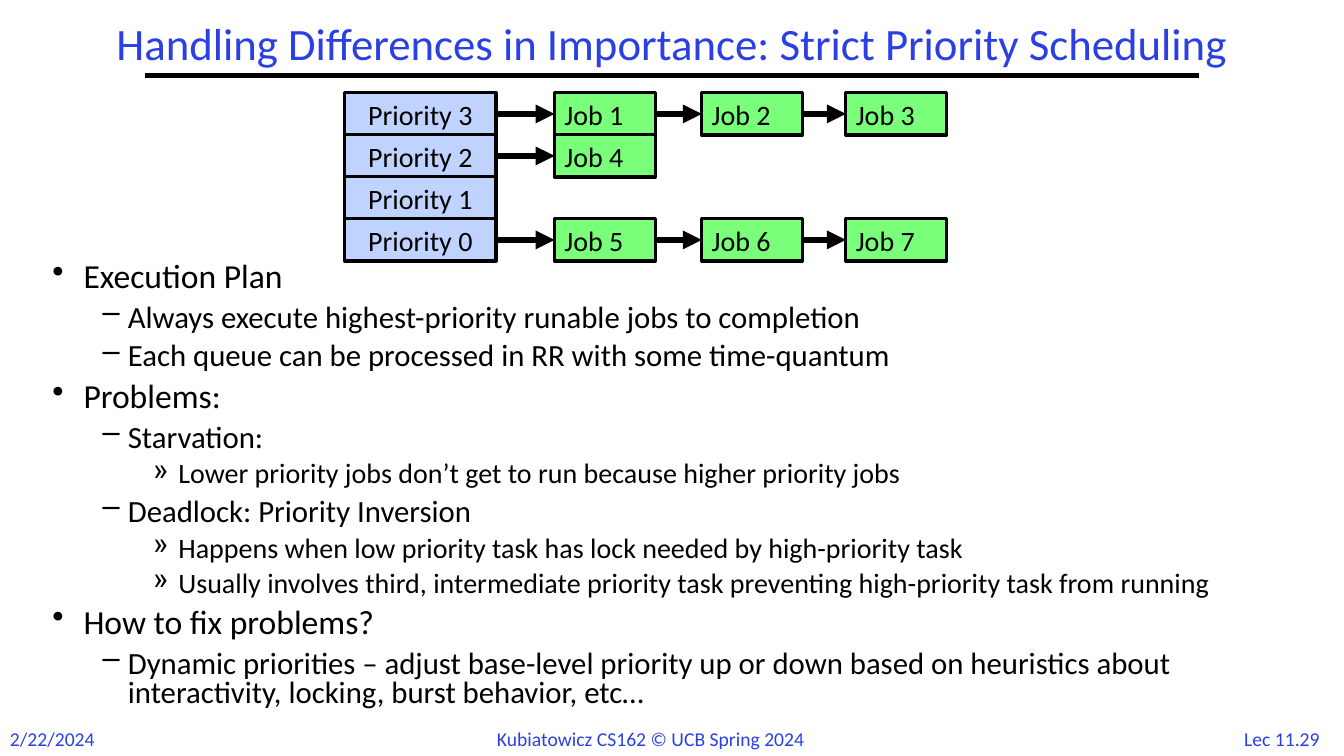
import dataclasses

import lxml.etree
import pptx
import pptx.dml.color
import pptx.enum.shapes
import pptx.enum.text
import pptx.oxml.ns
import pptx.util

Inches = pptx.util.Inches
Pt = pptx.util.Pt
Align = pptx.enum.text.PP_ALIGN
Anchor = pptx.enum.text.MSO_ANCHOR


@dataclasses.dataclass(frozen=True)
class Theme:
    """Hold the colours, font and type sizes of the slide."""

    font: str = "Calibri"
    accent: str = "2A40E2"
    ink: str = "000000"
    queue_fill: str = "C0D2FE"
    job_fill: str = "79FF79"
    title_size: int = 32
    level_sizes: tuple = (24, 22, 20)
    box_size: int = 20
    footer_size: int = 14
    rule_width: float = 3
    box_line: float = 2.25
    arrow_width: float = 4.5


BULLETS = (("•", 0.31, 0.31), ("–", 0.75, 0.25), ("»", 1.25, 0.25))

OUTLINE = (
    (0, "Execution Plan"),
    (1, "Always execute highest-priority runable jobs to completion"),
    (1, "Each queue can be processed in RR with some time-quantum"),
    (0, "Problems:"),
    (1, "Starvation:"),
    (2, "Lower priority jobs don’t get to run because higher priority jobs"),
    (1, "Deadlock: Priority Inversion"),
    (2, "Happens when low priority task has lock needed by high-priority task"),
    (2, "Usually involves third, intermediate priority task preventing "
        "high-priority task from running"),
    (0, "How to fix problems?"),
    (1, "Dynamic priorities – adjust base-level priority up or down based on "
        "heuristics about interactivity, locking, burst behavior, etc…"),
)

QUEUES = (
    ("Priority 3", ("Job 1", "Job 2", "Job 3")),
    ("Priority 2", ("Job 4",)),
    ("Priority 1", ()),
    ("Priority 0", ("Job 5", "Job 6", "Job 7")),
)
QUEUE_LEFT, QUEUE_TOP, QUEUE_WIDTH = 3.42, 0.92, 1.5
JOB_LEFTS, JOB_WIDTH = (5.5, 6.96, 8.39), 1
ROW_HEIGHT, ROW_PITCH = 0.42, 1.25 / 3

FOOTERS = (
    ("2/22/2024", 0, 1.07, Align.LEFT),
    ("Kubiatowicz CS162 © UCB Spring 2024", 4.83, 3.68, Align.LEFT),
    ("Lec 11.29", 12.18, 1.07, Align.CENTER),
)


def apply_format(target, values):
    """Set each named attribute on the target."""
    for name, value in values.items():
        setattr(target, name, value)


def add_child(parent, tag, **attributes):
    """Append a drawing element to the parent."""
    return lxml.etree.SubElement(parent, pptx.oxml.ns.qn(tag), **attributes)


class SlideBuilder:
    """Draw styled elements on the current slide."""

    def __init__(self, slide, theme):
        """Keep the slide and its theme."""
        self.slide = slide
        self.theme = theme

    def add_text(self, paragraph, text, size, colour, **values):
        """Fill a paragraph with one styled run."""
        apply_format(paragraph, values)
        run = paragraph.add_run()
        run.text = text
        apply_format(run.font, {"name": self.theme.font, "size": Pt(size)})
        run.font.color.rgb = pptx.dml.color.RGBColor.from_string(colour)

    def text_box(self, left, top, width, height, **values):
        """Add an empty text box and return its frame."""
        shape = self.slide.shapes.add_textbox(
            Inches(left), Inches(top), Inches(width), Inches(height))
        apply_format(shape.text_frame, {"word_wrap": True, **values})
        return shape.text_frame

    def title(self, text):
        """Add the title and the rule below it."""
        frame = self.text_box(0.17, 0.17, 13, 0.58, vertical_anchor=Anchor.MIDDLE)
        self.add_text(frame.paragraphs[0], text, self.theme.title_size,
                      self.theme.accent, alignment=Align.CENTER, line_spacing=0.9)
        self.line(self.theme.rule_width, (1.44, 0.75), (11.89, 0.75))

    def footer(self, text, left, width, alignment):
        """Add one footer label."""
        frame = self.text_box(left, 7.16, width, 0.34, word_wrap=False)
        self.add_text(frame.paragraphs[0], text, self.theme.footer_size,
                      self.theme.accent, alignment=alignment)

    def outline(self, items):
        """Add the bulleted outline."""
        frame = self.text_box(0.42, 2.56, 12.75, 4.89)
        for index, (level, text) in enumerate(items):
            paragraph = frame.add_paragraph() if index else frame.paragraphs[0]
            size = self.theme.level_sizes[level]
            self.add_text(paragraph, text, size, self.theme.ink, level=level,
                          line_spacing=0.8,
                          space_before=Pt(0.3 * size if index else 0))
            bullet, margin, hanging = BULLETS[level]
            properties = paragraph._p.get_or_add_pPr()
            properties.set("marL", str(Inches(margin)))
            properties.set("indent", str(-Inches(hanging)))
            add_child(properties, "a:buChar", char=bullet)

    def box(self, text, left, top, width, fill, alignment):
        """Add a labelled rectangle."""
        shape = self.slide.shapes.add_shape(
            pptx.enum.shapes.MSO_SHAPE.RECTANGLE,
            Inches(left), Inches(top), Inches(width), Inches(ROW_HEIGHT))
        shape.shadow.inherit = False
        shape.fill.solid()
        shape.fill.fore_color.rgb = pptx.dml.color.RGBColor.from_string(fill)
        self.stroke(shape.line, self.theme.box_line)
        shape.text_frame.vertical_anchor = Anchor.MIDDLE
        self.add_text(shape.text_frame.paragraphs[0], text, self.theme.box_size,
                      self.theme.ink, alignment=alignment)
        return shape

    def stroke(self, line, width):
        """Give a line its colour and width."""
        line.color.rgb = pptx.dml.color.RGBColor.from_string(self.theme.ink)
        line.width = Pt(width)

    def line(self, width, start=(0, 0), end=(0, 0)):
        """Add a straight line without a shadow."""
        connector = self.slide.shapes.add_connector(
            pptx.enum.shapes.MSO_CONNECTOR.STRAIGHT,
            *(Inches(length) for length in (*start, *end)))
        self.stroke(connector.line, width)
        add_child(connector._element.spPr, "a:effectLst")
        return connector

    def arrow(self, source, target):
        """Join two boxes from right side to left side."""
        connector = self.line(self.theme.arrow_width)
        connector.begin_connect(source, 3)
        connector.end_connect(target, 1)
        add_child(connector.line._get_or_add_ln(), "a:tailEnd", type="triangle")

    def queue(self, row, label, jobs):
        """Add a priority level and its chain of jobs."""
        top = QUEUE_TOP + row * ROW_PITCH
        previous = self.box(label, QUEUE_LEFT, top, QUEUE_WIDTH,
                            self.theme.queue_fill, Align.CENTER)
        for job, left in zip(jobs, JOB_LEFTS):
            current = self.box(job, left, top, JOB_WIDTH,
                               self.theme.job_fill, Align.LEFT)
            self.arrow(previous, current)
            previous = current


def main():
    """Build and save the presentation."""
    presentation = pptx.Presentation()
    apply_format(presentation, {"slide_width": Inches(13.33),
                                "slide_height": Inches(7.5)})
    slide = presentation.slides.add_slide(presentation.slide_layouts[6])
    builder = SlideBuilder(slide, Theme())
    builder.title("Handling Differences in Importance: Strict Priority Scheduling")
    builder.outline(OUTLINE)
    for row, (label, jobs) in enumerate(QUEUES):
        builder.queue(row, label, jobs)
    for footer in FOOTERS:
        builder.footer(*footer)
    presentation.save("out.pptx")


if __name__ == "__main__":
    main()
